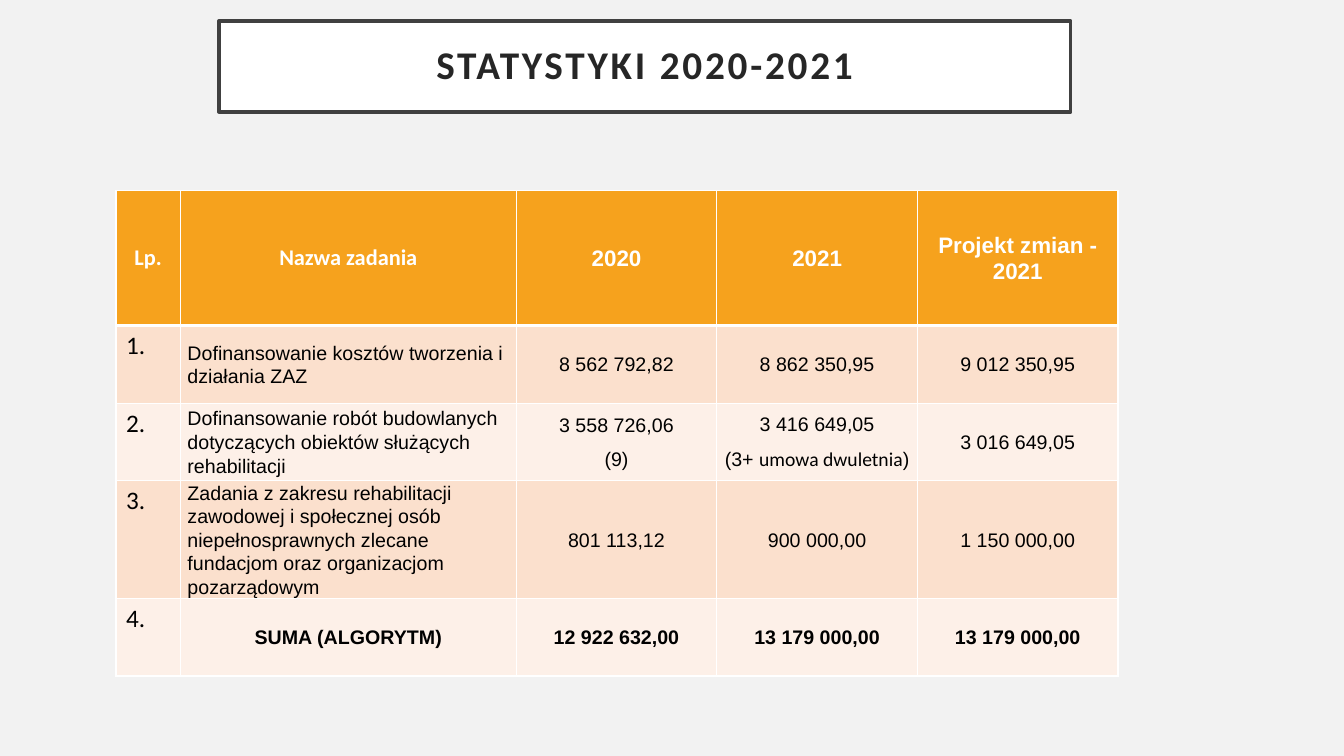
import pptx
import pptx.util
import pptx.dml.color
import pptx.enum.shapes
import pptx.enum.text
import pptx.oxml
import pptx.oxml.ns

Inches = pptx.util.Inches
Pt = pptx.util.Pt
Align = pptx.enum.text.PP_ALIGN
Anchor = pptx.enum.text.MSO_ANCHOR

COLUMN_WIDTHS = [0.64, 3.33, 1.99, 1.99, 1.99]
ROW_HEIGHTS = [1.34, 0.77, 0.77, 0.77, 0.77]
HEADER_FILL = "F6A21D"
BAND_FILLS = ["FDF0E8", "FBE0CD"]

TASKS = [
    ["Lp.", "Nazwa zadania", "2020", "2021", "Projekt zmian - 2021"],
    ["1.", "Dofinansowanie kosztów tworzenia i działania ZAZ",
     "8 562 792,82", "8 862 350,95", "9 012 350,95"],
    ["2.", "Dofinansowanie robót budowlanych dotyczących obiektów służących rehabilitacji",
     ["3 558 726,06", "(9)"],
     ["3 416 649,05", [("(3+ ", "Arial"), ("umowa dwuletnia", "Calibri"), (")", "Arial")]],
     "3 016 649,05"],
    ["3.", "Zadania z zakresu rehabilitacji zawodowej i społecznej osób niepełnosprawnych "
     "zlecane fundacjom oraz organizacjom pozarządowym",
     "801 113,12", "900 000,00", "1 150 000,00"],
    ["4.", "SUMA (ALGORYTM)", "12 922 632,00", "13 179 000,00", "13 179 000,00"],
]


def color(value):
    return pptx.dml.color.RGBColor.from_string(value)


def write(frame, content, size, font="Arial", ink="000000", bold=False,
          align=Align.LEFT, line=None, after=None, tracking=None):
    lines = content if isinstance(content, list) else [content]
    for index, pieces in enumerate(lines):
        paragraph = frame.add_paragraph() if index else frame.paragraphs[0]
        paragraph.alignment = align
        if line:
            paragraph.line_spacing = line
        if after:
            paragraph.space_after = Pt(after)
        for text, face in [(pieces, font)] if isinstance(pieces, str) else pieces:
            run = paragraph.add_run()
            run.text = text
            run.font.name = face
            run.font.size = Pt(size)
            run.font.bold = bold
            run.font.color.rgb = color(ink)
            if tracking:
                run.font._element.set("spc", str(tracking * 100))


def border(cell, **widths):
    properties = cell._tc.get_or_add_tcPr()
    for side in "LRTB":
        properties.append(pptx.oxml.parse_xml(
            f'<a:ln{side} {pptx.oxml.ns.nsdecls("a")} w="{Pt(widths.get(side, 1))}">'
            f'<a:solidFill><a:srgbClr val="FFFFFF"/></a:solidFill></a:ln{side}>'))


def add_title(slide, left, top, width, height):
    title = slide.shapes.add_shape(
        pptx.enum.shapes.MSO_SHAPE.RECTANGLE,
        Inches(left), Inches(top), Inches(width), Inches(height))
    title.shadow.inherit = False
    title.fill.solid()
    title.fill.fore_color.rgb = color("FFFFFF")
    title.line.color.rgb = color("404040")
    title.line.width = Pt(2.5)
    frame = title.text_frame
    frame.word_wrap = True
    frame.vertical_anchor = Anchor.MIDDLE
    frame.margin_left = frame.margin_right = Inches(0.2)
    frame.margin_top = frame.margin_bottom = Inches(0.2)
    write(frame, "STATYSTYKI 2020-2021", 28, font="Calibri", ink="262626", bold=True,
          align=Align.CENTER, line=0.9, tracking=2)


def fill_cell(cell, content, row, column):
    header = row == 0
    total = row == len(TASKS) - 1
    border(cell, B=3 if header else 1, T=3 if row == 1 else 1)
    cell.fill.solid()
    cell.fill.fore_color.rgb = color(HEADER_FILL if header else BAND_FILLS[row % 2])
    if column == 0 and not header:
        write(cell.text_frame, content, 18, font="Calibri")
        return
    cell.vertical_anchor = Anchor.MIDDLE
    if header and column < 2:
        write(cell.text_frame, content, 16, font="Calibri", ink="FFFFFF", bold=True,
              align=Align.CENTER)
        return
    cell.margin_left = cell.margin_right = Inches(0.07)
    cell.margin_top = cell.margin_bottom = 0
    write(cell.text_frame, content, 16 if header else 14,
          ink="FFFFFF" if header else "000000", bold=header or total,
          align=Align.LEFT if column == 1 and not total else Align.CENTER,
          line=1.07, after=8)


def add_task_table(slide, left, top):
    tasks = slide.shapes.add_table(
        len(ROW_HEIGHTS), len(COLUMN_WIDTHS), Inches(left), Inches(top),
        Inches(sum(COLUMN_WIDTHS)), Inches(sum(ROW_HEIGHTS))).table
    for column, width in zip(tasks.columns, COLUMN_WIDTHS):
        column.width = Inches(width)
    for row, height in zip(tasks.rows, ROW_HEIGHTS):
        row.height = Inches(height)
    for row, contents in enumerate(TASKS):
        for column, content in enumerate(contents):
            fill_cell(tasks.cell(row, column), content, row, column)


def main():
    deck = pptx.Presentation()
    deck.slide_width = Inches(13.33)
    deck.slide_height = Inches(7.5)
    slide = deck.slides.add_slide(deck.slide_layouts[6])
    slide.background.fill.solid()
    slide.background.fill.fore_color.rgb = color("F2F2F2")
    add_task_table(slide, 1.15, 1.89)
    add_title(slide, 2.17, 0.21, 8.45, 0.9)
    deck.save("out.pptx")


if __name__ == "__main__":
    main()
